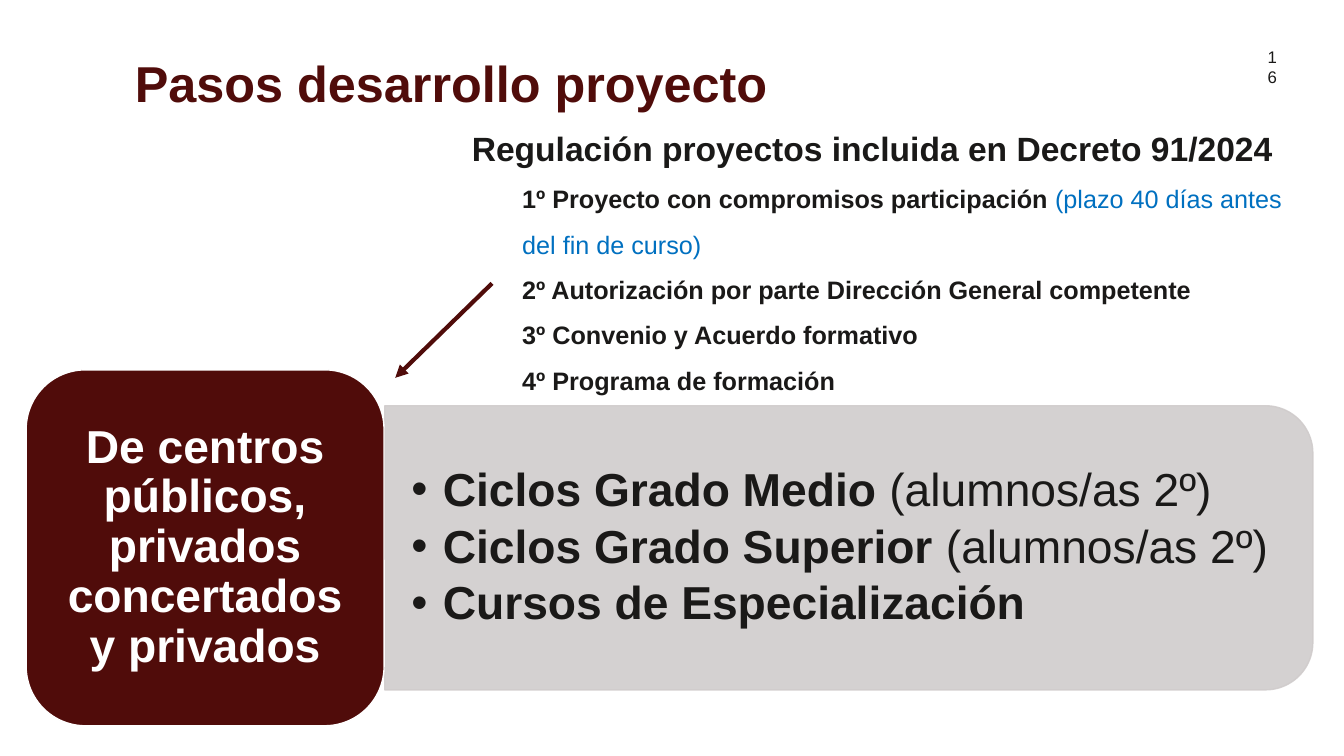
from lxml import etree
from pptx import Presentation
from pptx.dml.color import RGBColor
from pptx.enum.shapes import MSO_CONNECTOR, MSO_SHAPE
from pptx.enum.text import MSO_ANCHOR, PP_ALIGN
from pptx.oxml.ns import qn
from pptx.util import Cm, Pt

ROUND_TOP, ROUNDED = MSO_SHAPE.ROUND_2_SAME_RECTANGLE, MSO_SHAPE.ROUNDED_RECTANGLE
STRAIGHT = MSO_CONNECTOR.STRAIGHT
TOP, MIDDLE = MSO_ANCHOR.TOP, MSO_ANCHOR.MIDDLE
CENTER = PP_ALIGN.CENTER

MAROON = RGBColor(0x50, 0x0C, 0x0A)
GREY = RGBColor(0xD0, 0xCC, 0xCC)
INK = RGBColor(0x1A, 0x19, 0x18)
BLUE = RGBColor(0x00, 0x70, 0xC0)
WHITE = RGBColor(0xFF, 0xFF, 0xFF)
FONT = "Arial"

STEPS = [
    ("1º Proyecto con compromisos participación ", "(plazo 40 días antes del fin de curso)"),
    ("2º Autorización por parte Dirección General competente", ""),
    ("3º Convenio y Acuerdo formativo", ""),
    ("4º Programa de formación", ""),
]
COURSES = [
    ("Ciclos Grado Medio ", "(alumnos/as 2º)"),
    ("Ciclos Grado Superior ", "(alumnos/as 2º)"),
    ("Cursos de Especialización", ""),
]


def set_frame(frame, inset_x=0, inset_y=0, anchor=TOP, wrap=True):
    frame.word_wrap = wrap
    frame.vertical_anchor = anchor
    frame.margin_left = frame.margin_right = Cm(inset_x)
    frame.margin_top = frame.margin_bottom = Cm(inset_y)
    return frame


def add_text_box(slide, left, top, width, height, **frame_options):
    box = slide.shapes.add_textbox(Cm(left), Cm(top), Cm(width), Cm(height))
    return set_frame(box.text_frame, **frame_options)


def add_panel(slide, kind, left, top, width, height, fill, line):
    panel = slide.shapes.add_shape(kind, Cm(left), Cm(top), Cm(width), Cm(height))
    panel.shadow.inherit = False
    panel.fill.solid()
    panel.fill.fore_color.rgb = fill
    panel.line.color.rgb = line
    panel.line.width = Pt(1)
    return panel


def set_opacity(shape, percent):
    """Apply the same opacity to the fill and the outline."""
    for color in shape._element.spPr.iter(qn("a:srgbClr")):
        etree.SubElement(color, qn("a:alpha"), val=str(percent * 1000))


def next_paragraph(frame):
    """Return the empty first paragraph, or add one after the written ones."""
    first = frame.paragraphs[0]
    return frame.add_paragraph() if first.runs else first


def style(paragraph, size, color, bold=None, spacing=1.0, align=None):
    paragraph.line_spacing = spacing
    paragraph.alignment = align
    font = paragraph.font
    font.name, font.size, font.bold = FONT, Pt(size), bold
    font.color.rgb = color


def write(frame, text, size, color, **options):
    paragraph = next_paragraph(frame)
    paragraph.add_run().text = text
    style(paragraph, size, color, **options)


def write_item(frame, strong, plain, size, spacing, indent, plain_color=INK,
               bullet=False, space_after=0):
    """Write an indented line with a bold start and an optional regular ending."""
    paragraph = next_paragraph(frame)
    properties = paragraph._p.get_or_add_pPr()
    properties.set("marL", str(Cm(indent)))
    paragraph.space_after = Pt(space_after)
    if bullet:
        properties.set("indent", str(-Cm(indent)))
        etree.SubElement(properties, qn("a:buFont"), typeface=FONT)
        etree.SubElement(properties, qn("a:buChar"), char="•")
    style(paragraph, size, INK, spacing=spacing)
    start = paragraph.add_run()
    start.text = strong
    start.font.bold = True
    if plain:
        ending = paragraph.add_run()
        ending.text = plain
        ending.font.bold = False
        ending.font.color.rgb = plain_color


def add_arrow(slide, x1, y1, x2, y2):
    arrow = slide.shapes.add_connector(STRAIGHT, Cm(x1), Cm(y1), Cm(x2), Cm(y2))
    arrow.line.color.rgb = MAROON
    arrow.line.width = Pt(3)
    etree.SubElement(arrow.line._get_or_add_ln(), qn("a:tailEnd"), type="triangle")
    etree.SubElement(arrow._element.spPr, qn("a:effectLst"))


def main():
    presentation = Presentation()
    presentation.slide_width, presentation.slide_height = Cm(33.87), Cm(19.05)
    slide = presentation.slides.add_slide(presentation.slide_layouts[6])

    number = add_text_box(slide, 31.67, 1.4, 0.79, 0.56, inset_x=0.2,
                          anchor=MIDDLE, wrap=False)
    write(number, "16", 12, INK, align=CENTER)
    title = add_text_box(slide, 3.4, 1.35, 27, 1.65, inset_y=0.13)
    write(title, "Pasos desarrollo proyecto", 36, MAROON, bold=True, spacing=0.9)

    panel = add_panel(slide, ROUND_TOP, 17.81, 2.11, 7.16, 23.39, GREY, GREY)
    panel.rotation = 90
    set_opacity(panel, 90)
    courses = add_text_box(slide, 9.68, 10.57, 23.04, 6.48, inset_x=0.69,
                           inset_y=0.36, anchor=MIDDLE)
    for strong, plain in COURSES:
        write_item(courses, strong, plain, 33, 0.9, 0.79, bullet=True, space_after=5)

    card = add_panel(slide, ROUNDED, 0.66, 9.32, 9.02, 8.97, MAROON, WHITE)
    centres = set_frame(card.text_frame, 0.36, 0.18, MIDDLE)
    write(centres, "De centros públicos, privados concertados y privados",
          33, WHITE, bold=True, spacing=0.9, align=CENTER)

    regulation = add_text_box(slide, 11.89, 3.23, 20.73, 7.82)
    write(regulation, "Regulación proyectos incluida en Decreto 91/2024", 24, INK, bold=True)
    for strong, plain in STEPS:
        write_item(regulation, strong, plain, 18, 1.5, 1.27, plain_color=BLUE)
    add_arrow(slide, 12.4, 7.14, 9.96, 9.52)

    presentation.save("out.pptx")


if __name__ == "__main__":
    main()
